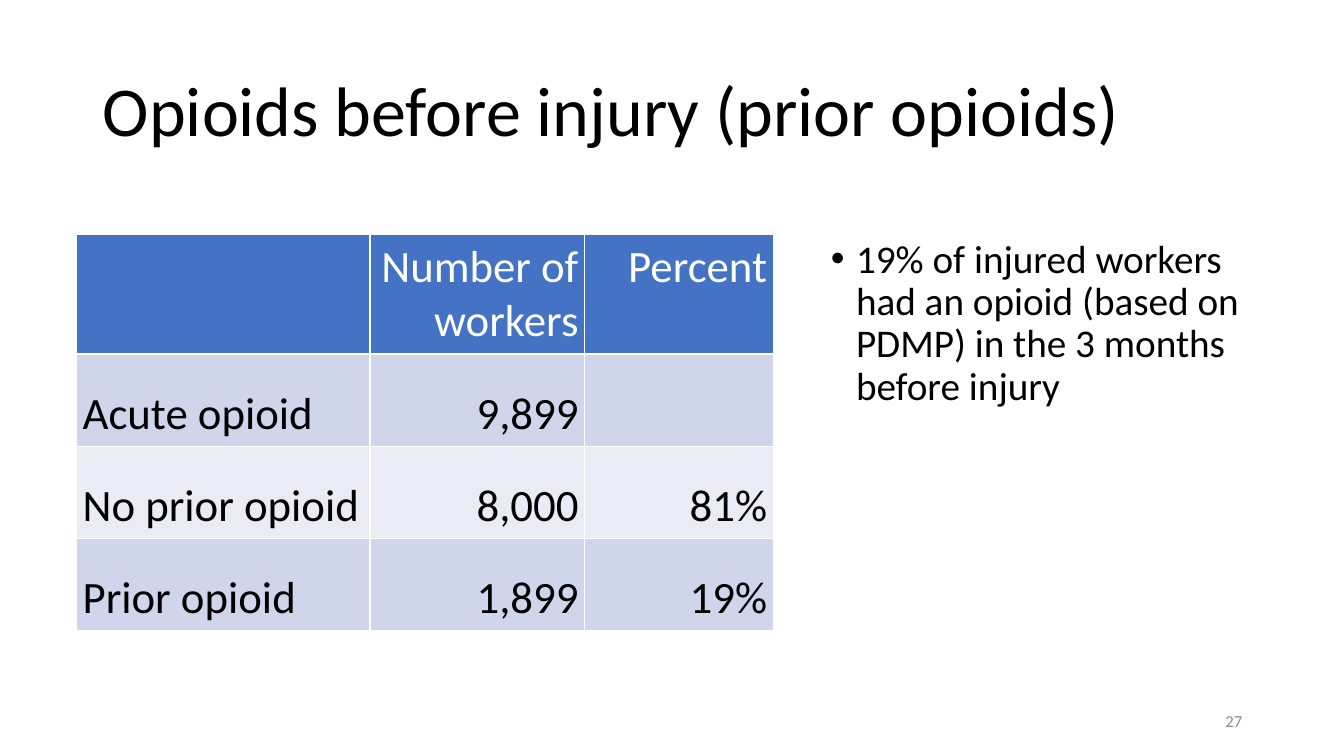
from lxml import etree
from pptx import Presentation, util as u
from pptx.dml.color import RGBColor
from pptx.enum import text
from pptx.oxml.ns import qn

# Content
TITLE = "Opioids before injury (prior opioids)"
ROWS = [
    ("", "Number of workers", "Percent"),
    ("Acute opioid", "9,899", ""),
    ("No prior opioid", "8,000", "81%"),
    ("Prior opioid", "1,899", "19%"),
]
FINDING = ("19% of injured workers had an opioid (based on PDMP) "
           "in the 3 months before injury")
PAGE = "27"

# Layout and colours
W, H = 13.33, 7.5
TOP = 0.31 * H
COLS = (2.91, 2.13, 1.87)
HEADER_H, ROW_H = 1.18, 0.91
HEADER, BANDS = "4472C4", ("CFD5EA", "E9EBF5")
BLACK, WHITE, GREY = "000000", "FFFFFF", "8C8C8C"
LEFT, RIGHT = text.PP_ALIGN.LEFT, text.PP_ALIGN.RIGHT


def rgb(value):
    return RGBColor.from_string(value)


def place(sp, left, top, width, height):
    box = dict(left=left, top=top, width=width, height=height)
    for name, value in box.items():
        setattr(sp, name, u.Inches(value))


def write(tf, words, size, color, **formats):
    p = tf.paragraphs[0]
    for name, value in formats.items():
        setattr(p, name, value)
    r = p.add_run()
    r.text = words
    for name, value in dict(name="Calibri", size=u.Pt(size), bold=False).items():
        setattr(r.font, name, value)
    r.font.color.rgb = rgb(color)
    return p


def add_borders(cell, color, width):
    tc_pr = cell._tc.get_or_add_tcPr()
    for i, side in enumerate("LRTB"):
        ln = etree.Element(qn(f"a:ln{side}"), w=str(u.Pt(width)))
        fill = etree.SubElement(ln, qn("a:solidFill"))
        etree.SubElement(fill, qn("a:srgbClr"), val=color)
        tc_pr.insert(i, ln)


prs = Presentation()
prs.slide_width, prs.slide_height = u.Inches(W), u.Inches(H)
s = prs.slides.add_slide(prs.slide_layouts[1])
title, body = s.shapes.title, s.placeholders[1]

# Title
place(title, 0.92, 0.4, 11.5, 1.45)
title.text_frame.auto_size = text.MSO_AUTO_SIZE.NONE
title.text_frame.vertical_anchor = text.MSO_ANCHOR.MIDDLE
write(title.text_frame, TITLE, 50, BLACK, alignment=LEFT, line_spacing=0.9)

# Table of workers
height = HEADER_H + ROW_H * (len(ROWS) - 1)
table = s.shapes.add_table(len(ROWS), len(COLS), u.Inches(0.76), u.Inches(TOP),
                           u.Inches(sum(COLS)), u.Inches(height)).table
table.horz_banding = False
for column, width in zip(table.columns, COLS):
    column.width = u.Inches(width)
for i, row in enumerate(ROWS):
    table.rows[i].height = u.Inches(ROW_H if i else HEADER_H)
    for j, words in enumerate(row):
        cell = table.cell(i, j)
        cell.margin_left = cell.margin_right = u.Inches(0.06)
        cell.fill.solid()
        cell.fill.fore_color.rgb = rgb(BANDS[(i - 1) % 2] if i else HEADER)
        add_borders(cell, WHITE, 1)
        if words:
            write(cell.text_frame, words, 32, BLACK if i else WHITE,
                  alignment=RIGHT if j else LEFT, line_spacing=1.5 if i else 1.0)

# Finding
place(body, 8.14, TOP, 4.52, 4.37)
body.text_frame.auto_size = text.MSO_AUTO_SIZE.NONE
p = write(body.text_frame, FINDING, 28, BLACK,
          line_spacing=0.9, space_before=u.Pt(0))
p_pr = p._p.get_or_add_pPr()
p_pr.set("marL", str(u.Inches(0.25)))
p_pr.set("indent", str(-u.Inches(0.25)))
etree.SubElement(p_pr, qn("a:buFont"), typeface="Arial")
etree.SubElement(p_pr, qn("a:buChar"), char="•")

# Page number
tf = s.shapes.add_textbox(u.Inches(9.42), u.Inches(6.95),
                          u.Inches(3), u.Inches(0.4)).text_frame
tf.word_wrap = True
tf.vertical_anchor = text.MSO_ANCHOR.MIDDLE
write(tf, PAGE, 12, GREY, alignment=RIGHT)

prs.save("out.pptx")
